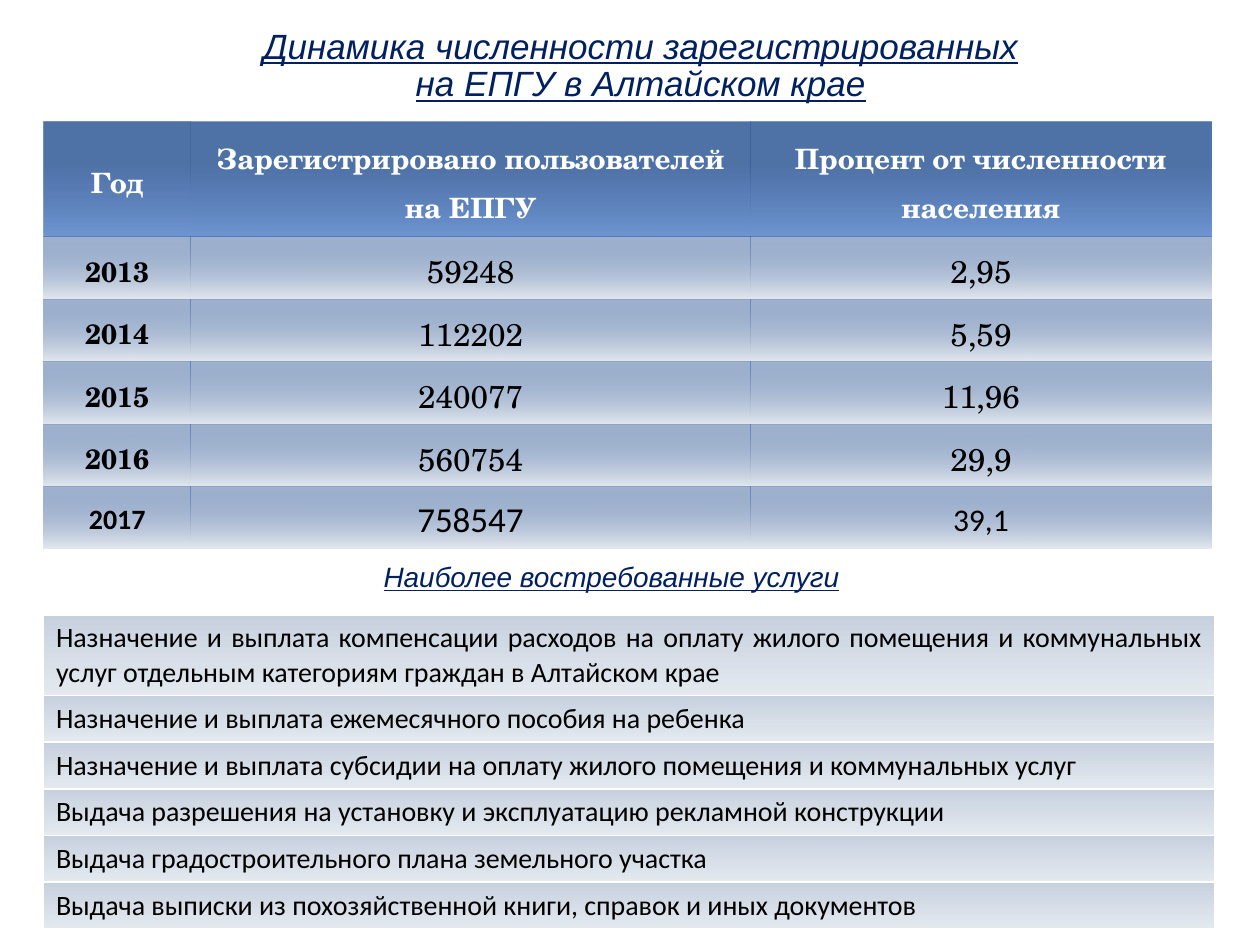
"""Build a slide with user counts by year and the services most in demand."""
import pptx
import pptx.dml.color
import pptx.enum.text
import pptx.oxml.ns
import pptx.util
from lxml import etree

Pt = pptx.util.Pt
qn = pptx.oxml.ns.qn
ALIGN = pptx.enum.text.PP_ALIGN
ANCHOR = pptx.enum.text.MSO_ANCHOR

TITLE = "Динамика численности зарегистрированных на ЕПГУ в Алтайском крае"
SUBHEAD = "Наиболее востребованные услуги"
YEARS = [
    ("Год", "Зарегистрировано пользователей на ЕПГУ", "Процент от численности населения"),
    ("2013", "59248", "2,95"),
    ("2014", "112202", "5,59"),
    ("2015", "240077", "11,96"),
    ("2016", "560754", "29,9"),
    ("2017", "758547", "39,1"),
]
NEEDS = [
    ("Назначение и выплата компенсации расходов на оплату жилого помещения "
     "и коммунальных услуг отдельным категориям граждан в Алтайском крае", ALIGN.JUSTIFY),
    ("Назначение и выплата ежемесячного пособия на ребенка", ALIGN.JUSTIFY),
    ("Назначение и выплата субсидии на оплату жилого помещения и коммунальных услуг",
     ALIGN.JUSTIFY),
    ("Выдача разрешения на установку и эксплуатацию рекламной конструкции", ALIGN.LEFT),
    ("Выдача градостроительного плана земельного участка", ALIGN.LEFT),
    ("Выдача выписки из похозяйственной книги, справок и иных документов", ALIGN.LEFT),
]
HEAD = [(37, "2F5897", 84), (100, "7097D3", 100)]
BODY = [(0, "2F5897", 46), (100, "E4E9EF", 100)]
PALE = [(0, "C7D1DE", 100), (100, "E4E9EF", 100)]
PLAIN = "{2D5ABB26-0587-4C30-8999-92F81FD0307C}"


def rgb(code):
    return pptx.dml.color.RGBColor.from_string(code)


def style(para, face, size, color, align, bold=False, slant=False):
    para.alignment = align
    font = para.font
    font.name, font.size, font.bold = face, Pt(size), bold
    font.italic = font.underline = slant
    font.color.rgb = rgb(color)


def label(slide, text, box, size, anchor, space=1.0):
    frame = slide.shapes.add_textbox(*map(Pt, box)).text_frame
    frame.word_wrap = True
    frame.vertical_anchor = anchor
    frame.text = text
    para = frame.paragraphs[0]
    para.line_spacing = space
    style(para, "Arial", size, "002060", ALIGN.CENTER, slant=True)


def grid(slide, left, top, cols, rows):
    box = map(Pt, (left, top, sum(cols), sum(rows)))
    table = slide.shapes.add_table(len(rows), len(cols), *box).table
    table._tbl.tblPr.find(qn("a:tableStyleId")).text = PLAIN
    for col, width in zip(table.columns, cols):
        col.width = Pt(width)
    for row, height in zip(table.rows, rows):
        row.height = Pt(height)
    return table


def shade(cell, stops):
    cell.fill.gradient()
    cell.fill.gradient_angle = 270
    for stop, (place, color, alpha) in zip(cell.fill.gradient_stops, stops):
        stop.position = place / 100
        stop.color.rgb = rgb(color)
    nodes = cell._tc.tcPr.iter(qn("a:srgbClr"))
    tints = [node for node in nodes if node.getparent().tag == qn("a:gs")]
    for node, (place, color, alpha) in zip(tints, stops):
        if alpha < 100:
            etree.SubElement(node, qn("a:alpha"), val=str(alpha * 1000))


def frame(cell, color, width):
    props = cell._tc.get_or_add_tcPr()
    for side in "LRTB":
        line = etree.SubElement(props, qn("a:ln" + side), w=str(Pt(width)))
        fill = etree.SubElement(line, qn("a:solidFill"))
        etree.SubElement(fill, qn("a:srgbClr"), val=color)


def fill_years(table):
    last = len(YEARS) - 1
    for r, row in enumerate(YEARS):
        for c, text in enumerate(row):
            cell = table.cell(r, c)
            cell.text = text
            cell.vertical_anchor = ANCHOR.MIDDLE
            cell.margin_left = cell.margin_right = Pt(5.4)
            cell.margin_top = cell.margin_bottom = Pt(0)
            bold = r == 0 or c == 0
            size = 16 if bold else 20 if (r, c) == (last, 1) else 18
            face = "Calibri" if r == last else "TeX Gyre Schola"
            para = cell.text_frame.paragraphs[0]
            para.line_spacing = 1.15
            style(para, face, size, "000000" if r else "FFFFFF", ALIGN.CENTER, bold)
            shade(cell, BODY if r else HEAD)


def fill_needs(table):
    for r, (text, align) in enumerate(NEEDS):
        cell = table.cell(r, 0)
        cell.text = text
        style(cell.text_frame.paragraphs[0], "Calibri", 16, "000000", align)
        frame(cell, "FFFFFF", 1)
        shade(cell, PALE)


def main():
    deck = pptx.Presentation()
    deck.slide_width, deck.slide_height = Pt(720), Pt(540)
    slide = deck.slides.add_slide(deck.slide_layouts[6])
    label(slide, SUBHEAD, (174.2, 298, 350.6, 62.6), 16, ANCHOR.MIDDLE)
    fill_needs(grid(slide, 24.8, 351.4, [669.6], [46] + [26.7] * 5))
    label(slide, TITLE, (139.7, 29.5, 452.9, 33.8), 20, ANCHOR.BOTTOM, 0.9)
    fill_years(grid(slide, 24.9, 69.8, [84.2, 319.7, 263.5], [65.5] + [35.7] * 5))
    deck.save("out.pptx")


if __name__ == "__main__":
    main()
